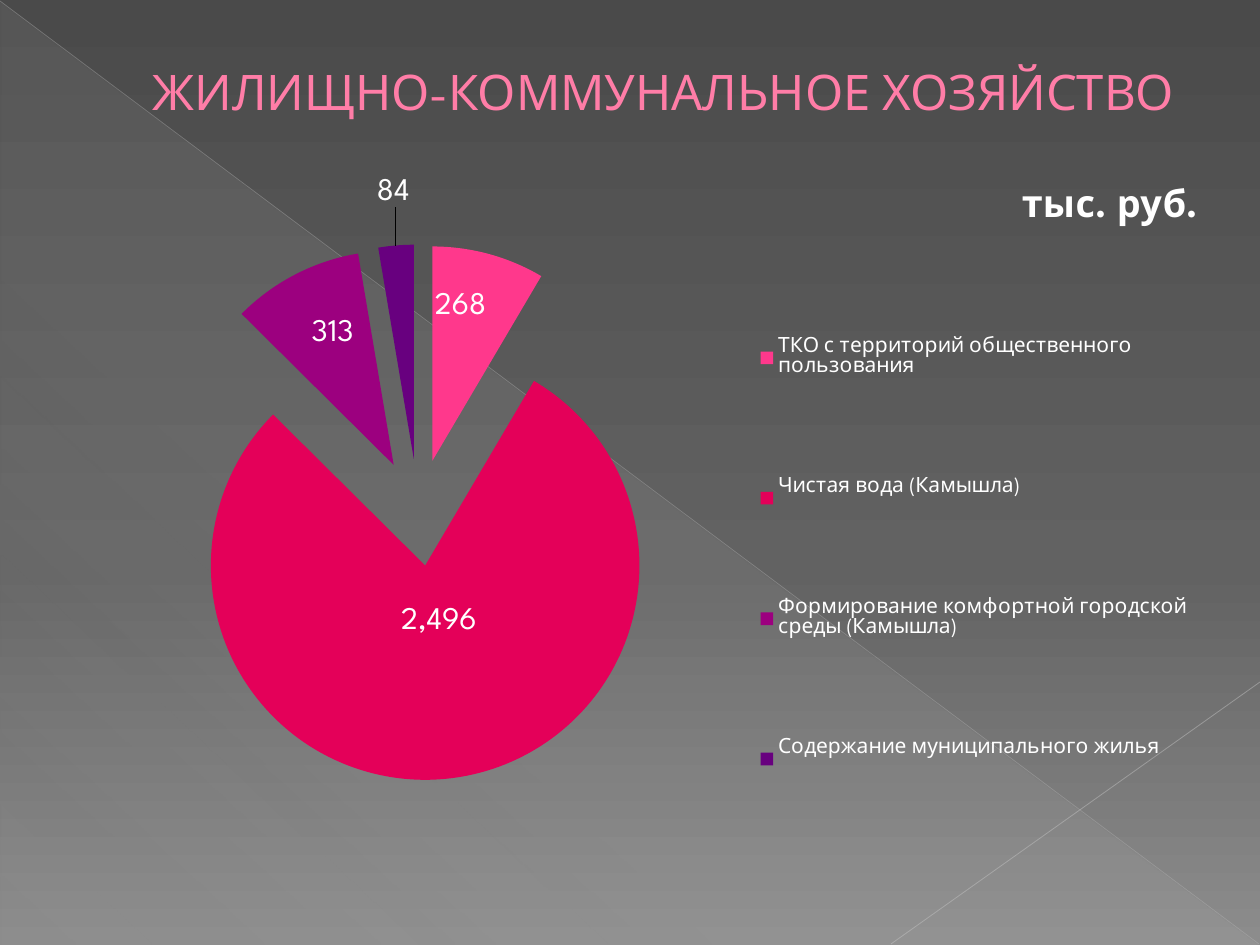
import pptx
import pptx.util
import pptx.chart.data
import pptx.dml.color
import pptx.enum.chart
import pptx.enum.shapes
import pptx.enum.text
import pptx.oxml
import pptx.oxml.ns

Pt = pptx.util.Pt
qn = pptx.oxml.ns.qn
FONT = "League Spartan"
HUES = {
    "white": "FFFFFF", "title": "FF7DA7",
    "top": "4A4A4A", "mid": "626262", "low": "8C8C8C",
    "veil": "D2D2D2", "long": "BFBFBF", "short": "C6C6C6",
}
ITEMS = [
    ("ТКО с территорий общественного пользования", 268, "FF388C", (0, -0.07)),
    ("Чистая вода (Камышла)", 2496, "E40059", (0, -0.07)),
    ("Формирование комфортной городской среды (Камышла)", 313, "9C007F", (-0.01, -0.05)),
    ("Содержание муниципального жилья", 84, "68007F", (-0.01, -0.22)),
]


def px(*vals):
    return [pptx.util.Emu(round(v * 914400 / 126)) for v in vals]


def rgb(hue):
    return pptx.dml.color.RGBColor.from_string(hue)


def add(node, tag, **attrs):
    kid = pptx.oxml.parse_xml(
        f'<{tag} {pptx.oxml.ns.nsdecls(tag.split(":")[0])}/>')
    for key, val in attrs.items():
        kid.set(key, str(val))
    node.append(kid)
    return kid


def blend(fill, node, stops, angle):
    fill.gradient()
    fill.gradient_angle = 360 - angle
    row = node.xpath(".//a:gsLst")[0]
    for old in list(row):
        row.remove(old)
    for pos, hue, alpha in stops:
        stop = add(row, "a:gs", pos=pos * 1000)
        tint = add(stop, "a:srgbClr", val=HUES[hue])
        if alpha < 100:
            add(tint, "a:alpha", val=alpha * 1000)


def add_veil(slide):
    kind = pptx.enum.shapes.MSO_SHAPE.RIGHT_TRIANGLE
    veil = slide.shapes.add_shape(kind, *px(1, 2, 1258, 943))
    veil.shadow.inherit = False
    veil.line.fill.background()
    stops = [(0, "veil", 10), (70, "veil", 8), (100, "veil", 1)]
    blend(veil.fill, veil.element, stops, 133)


def add_line(slide, ends, hue, width, alpha):
    kind = pptx.enum.shapes.MSO_CONNECTOR.STRAIGHT
    line = slide.shapes.add_connector(kind, *px(*ends))
    line.line.color.rgb = rgb(HUES[hue])
    line.line.width = Pt(width)
    add(line.element.xpath(".//a:ln//a:srgbClr")[0], "a:alpha", val=alpha * 1000)
    add(line.element.spPr, "a:effectLst")


def add_title(slide, text):
    title = slide.shapes.title
    title.left, title.top, title.width, title.height = px(63, 37, 1134, 108)
    frame = title.text_frame
    frame.text = text
    frame.vertical_anchor = pptx.enum.text.MSO_ANCHOR.MIDDLE
    para = frame.paragraphs[0]
    para.alignment = pptx.enum.text.PP_ALIGN.CENTER
    set_font(para.font, 28, "title")
    add_pr = para.font._element.getparent()
    add_pr.set("marL", str(px(67)[0]))
    slide.shapes.element.append(title.element)


def set_font(font, size, hue="white", bold=False):
    font.name = FONT
    font.size = Pt(size)
    font.bold = bold
    font.color.rgb = rgb(HUES[hue])


def place(node, after, inner=False, edge=True, **spots):
    for old in node.findall(qn("c:layout")):
        node.remove(old)
    box = add(node, "c:layout")
    hand = add(box, "c:manualLayout")
    if inner:
        add(hand, "c:layoutTarget", val="inner")
    if edge:
        for key in "xy":
            add(hand, f"c:{key}Mode", val="edge")
    for key, val in spots.items():
        add(hand, f"c:{key}", val=val)
    if after:
        node.find(qn(after)).addnext(box)
    else:
        node.insert(0, box)


def add_pie(slide):
    data = pptx.chart.data.CategoryChartData(number_format="#,##0")
    data.categories = [item[0] for item in ITEMS]
    data.add_series("Series 1", [item[1] for item in ITEMS])
    kind = pptx.enum.chart.XL_CHART_TYPE.PIE
    chart = slide.shapes.add_chart(kind, *px(44, 165, 1170, 724), data).chart
    set_font(chart.font, 18)
    root = chart.element
    place(root.xpath(".//c:plotArea")[0], None, inner=True,
          x=0, y=0.11, w=0.64, h=0.74)
    add_head(chart)
    add_key(chart)
    add_parts(chart)


def add_head(chart):
    frame = chart.chart_title.text_frame
    frame.text = "тыс. руб."
    set_font(frame.paragraphs[0].font, 21.6, bold=True)
    place(chart.element.xpath(".//c:title")[0], "c:tx", x=0.83, y=0.02)


def add_key(chart):
    chart.has_legend = True
    key = chart.legend
    key.position = pptx.enum.chart.XL_LEGEND_POSITION.RIGHT
    key.include_in_layout = False
    set_font(key.font, 12)
    place(chart.element.xpath(".//c:legend")[0], "c:legendPos",
          x=0.6, y=0.1, w=0.39, h=0.86)


def add_parts(chart):
    plot = chart.plots[0]
    plot.vary_by_categories = True
    center = pptx.enum.chart.XL_LABEL_POSITION.CENTER
    series = plot.series[0]
    labels = series.data_labels
    labels.show_value = True
    labels.number_format = "#,##0"
    labels.number_format_is_linked = False
    labels.position = center
    set_font(labels.font, 18)
    for i, (name, value, hue, shift) in enumerate(ITEMS):
        part = series.points[i]
        part.format.fill.solid()
        part.format.fill.fore_color.rgb = rgb(hue)
        part.data_label.position = center
        set_font(part.data_label.font, 18)
        spot = chart.element.xpath(".//c:ser/c:dLbls/c:dLbl")[i]
        place(spot, "c:idx", edge=False, x=shift[0], y=shift[1])
    burst = add(series.format._element, "c:explosion", val=25)
    series.format._element.find(qn("c:dPt")).addprevious(burst)


def main():
    deck = pptx.Presentation()
    deck.slide_width, deck.slide_height = px(1260, 945)
    slide = deck.slides.add_slide(deck.slide_layouts[5])
    stops = [(0, "top", 100), (60, "mid", 100), (100, "low", 100)]
    blend(slide.background.fill, slide.element, stops, 90)
    add_veil(slide)
    add_line(slide, (0, 1, 1259, 944), "long", 0.39, 35)
    add_line(slide, (1260, 682, 891, 944), "short", 0.47, 45)
    add_title(slide, "ЖИЛИЩНО-КОММУНАЛЬНОЕ ХОЗЯЙСТВО")
    add_pie(slide)
    deck.save("out.pptx")


if __name__ == "__main__":
    main()
